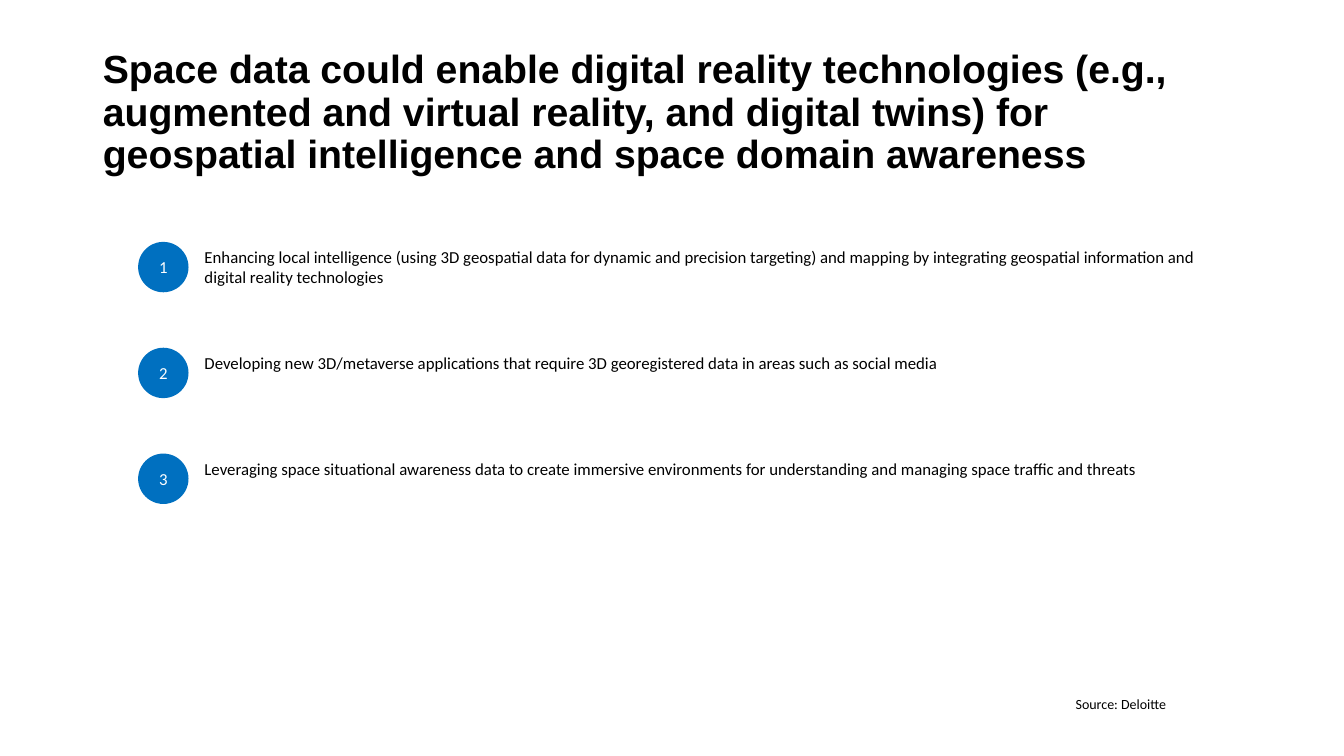
from pptx import Presentation
from pptx.dml.color import RGBColor
from pptx.enum.shapes import MSO_SHAPE as Shape
from pptx.enum.text import MSO_ANCHOR as Anchor, MSO_AUTO_SIZE as AutoSize, PP_ALIGN as Align
from pptx.util import Pt

EMU_PER_PX = 9144
COLORS = {"text": "000000", "badge": "0070C0", "number": "FFFFFF"}
TITLE = (
    "Space data could enable digital reality technologies (e.g., augmented and virtual "
    "reality, and digital twins) for geospatial intelligence and space domain awareness"
)
USES = [
    "Enhancing local intelligence (using 3D geospatial data for dynamic and precision "
    "targeting) and mapping by integrating geospatial information and digital reality technologies",
    "Developing new 3D/metaverse applications that require 3D georegistered data in areas "
    "such as social media",
    "Leveraging space situational awareness data to create immersive environments for "
    "understanding and managing space traffic and threats",
]
FIRST_ROW, ROW_STEP, ROW_HEIGHT = 240, 105, 50


def px(*lengths):
    return [length * EMU_PER_PX for length in lengths]


class SlideBuilder:
    """Holds the text style and the current slide, and adds its elements."""

    def __init__(self, slide, font="Calibri", size=12):
        self.slide = slide
        self.font = font
        self.size = size

    def set_text(self, shape, text, size=None, font=None, color="text", bold=False,
                 align=Align.LEFT, anchor=Anchor.TOP):
        frame = shape.text_frame
        frame.word_wrap = True
        frame.auto_size = AutoSize.NONE
        frame.vertical_anchor = anchor
        paragraph = frame.paragraphs[0]
        paragraph.alignment = align
        run = paragraph.add_run()
        run.text = text
        run.font.name = font or self.font
        run.font.size = Pt(size or self.size)
        run.font.bold = bold
        run.font.color.rgb = RGBColor.from_string(COLORS[color])
        return paragraph

    def title(self, text, left, top, width, height):
        title = self.slide.shapes.title
        title.left, title.top, title.width, title.height = px(left, top, width, height)
        paragraph = self.set_text(title, text, 28, "Arial", bold=True, anchor=Anchor.MIDDLE)
        paragraph.line_spacing = 0.9

    def text(self, text, left, top, width, height, size=None):
        box = self.slide.shapes.add_textbox(*px(left, top, width, height))
        self.set_text(box, text, size)

    def badge(self, number, left, top, diameter):
        circle = self.slide.shapes.add_shape(Shape.OVAL, *px(left, top, diameter, diameter))
        circle.shadow.inherit = False
        circle.fill.solid()
        circle.fill.fore_color.rgb = RGBColor.from_string(COLORS["badge"])
        circle.line.fill.background()
        self.set_text(circle, str(number), color="number", align=Align.CENTER, anchor=Anchor.MIDDLE)


def main():
    presentation = Presentation()
    presentation.slide_width, presentation.slide_height = px(1333, 750)
    builder = SlideBuilder(presentation.slides.add_slide(presentation.slide_layouts[5]))
    builder.title(TITLE, 92, 40, 1150, 145)
    for index, use in enumerate(USES):
        top = FIRST_ROW + index * ROW_STEP
        builder.badge(index + 1, 137, top, ROW_HEIGHT)
        builder.text(use, 193, top, 1036, ROW_HEIGHT)
    builder.text("Source: Deloitte", 1057, 685, 210, 30, size=10)
    presentation.save("out.pptx")


if __name__ == "__main__":
    main()
